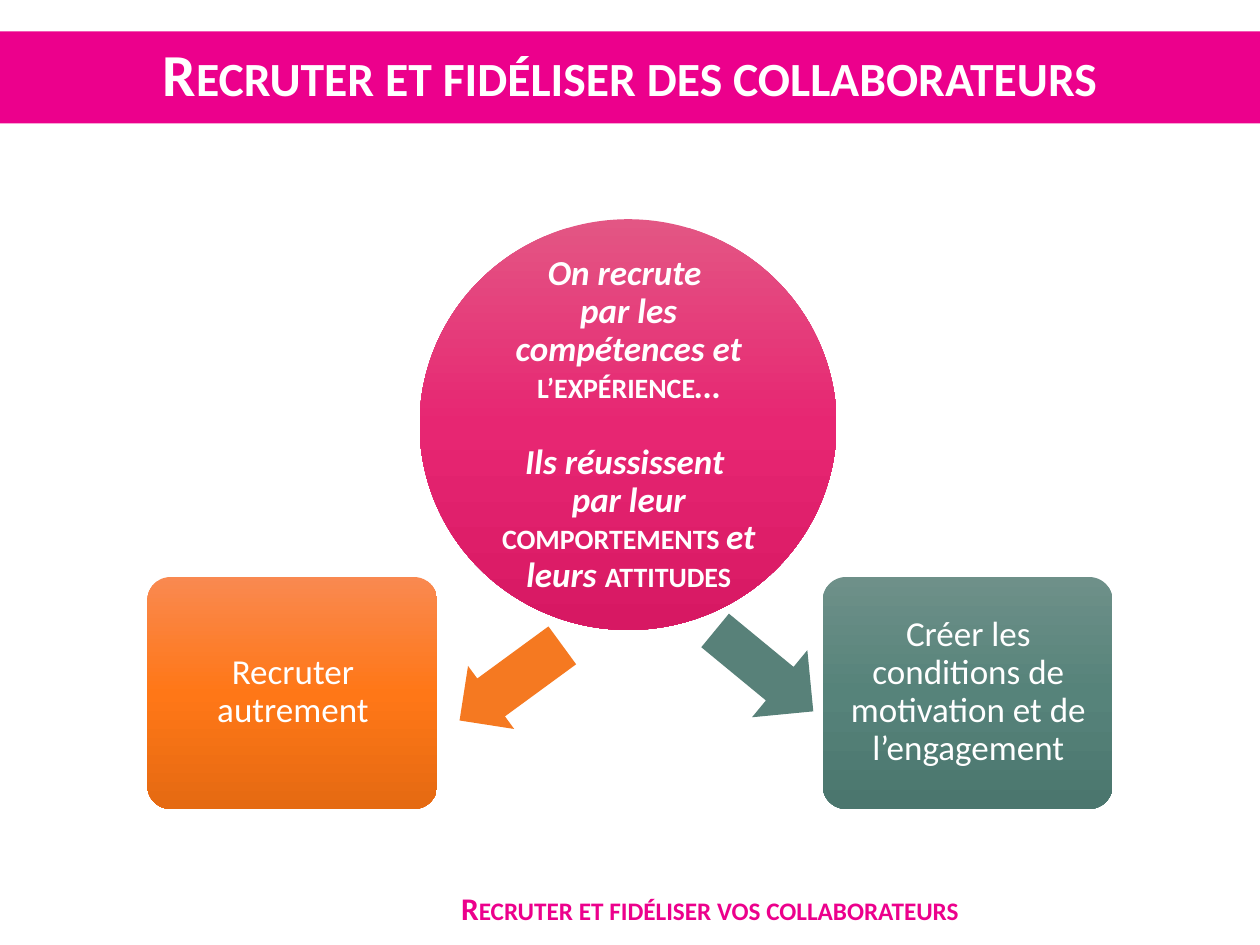
"""Build the slide on recruiting and retaining staff."""
from copy import deepcopy

from pptx import Presentation
from pptx.dml.color import RGBColor
from pptx.enum import shapes, text
from pptx.oxml import ns
from pptx.util import Inches, Pt

COLOURS = {"magenta": "EC008C", "white": "FFFFFF", "orange": "F57921", "green": "588179"}
GRADIENTS = {
    "pink": ("E35684", "E72672", "D71863"),
    "orange": ("F98950", "FF7717", "E56A12"),
    "green": ("6E9089", "56837A", "4B766E"),
}
KINDS = shapes.MSO_SHAPE
ITALIC = {"bold": True, "italic": True}
CAPS = {"bold": True, "italic": False, "caps": True}
PLAIN = {"bold": False}


def add_figure(kind, place, fill, adjustments=(), rotation=0):
    figure = page.shapes.add_shape(kind, *map(Inches, place))
    figure.shadow.inherit = False
    figure.line.fill.background()
    figure.rotation = rotation
    for index, value in enumerate(adjustments):
        figure.adjustments[index] = value
    if isinstance(fill, str):
        figure.fill.solid()
        figure.fill.fore_color.rgb = RGBColor.from_string(fill)
        return figure
    figure.fill.gradient()
    figure.fill.gradient_angle = 270
    stop_list = figure._element.spPr.find(ns.qn("a:gradFill")).find(ns.qn("a:gsLst"))
    stop_list.append(deepcopy(stop_list[0]))
    for index, stop in enumerate(figure.fill.gradient_stops):
        stop.position = index / 2
        stop.color.rgb = RGBColor.from_string(fill[index])
    return figure


def write(box, paragraphs, size, colour="white", margin=None, spacing=0.9, gap=0):
    frame = box.text_frame
    frame.word_wrap = True
    frame.vertical_anchor = text.MSO_ANCHOR.MIDDLE
    if margin is not None:
        for side in ("left", "right", "top", "bottom"):
            setattr(frame, f"margin_{side}", Inches(margin))
    for index, pieces in enumerate(paragraphs):
        para = frame.add_paragraph() if index else frame.paragraphs[0]
        para.alignment = text.PP_ALIGN.CENTER
        para.line_spacing = spacing
        if index:
            para.space_before = Pt(gap)
        for words, style in pieces:
            for number, line in enumerate(words.split("\n")):
                if number:
                    para.add_line_break()
                span = para.add_run()
                span.text = line
                look = {"name": "Calibri", "size": Pt(size), **style}
                if look.pop("caps", False):
                    span.font._element.set("cap", "small")
                for name, value in look.items():
                    setattr(span.font, name, value)
                span.font.color.rgb = RGBColor.from_string(COLOURS[colour])


deck = Presentation()
deck.slide_width, deck.slide_height = Inches(10), Inches(7.5)
page = deck.slides.add_slide(deck.slide_layouts[6])

footer = page.shapes.add_textbox(*map(Inches, (2.15, 7.01, 6.97, 0.4)))
write(footer, [[("Recruter et fidéliser vos collaborateurs", CAPS)]], 18, "magenta", spacing=1)

banner = add_figure(KINDS.RECTANGLE, (0, 0.25, 10, 0.73), COLOURS["magenta"])
write(banner, [[("Recruter et fidéliser des collaborateurs", CAPS)]], 34)

add_figure(KINDS.OVAL, (3.33, 1.74, 3.31, 3.26), GRADIENTS["pink"])
message = page.shapes.add_textbox(*map(Inches, (3.82, 2.22, 2.34, 2.31)))
write(message, [
    [("On recrute \npar les compétences et ", ITALIC), ("l’expérience", CAPS), ("…", ITALIC)],
    [("Ils réussissent \npar leur ", ITALIC), ("comportements ", CAPS),
     ("et leurs ", ITALIC), ("attitudes", CAPS)],
], 20, margin=0.01, gap=21.5)

add_figure(KINDS.LEFT_ARROW, (3.55, 5.11, 1.01, 0.62), COLOURS["orange"], (0.6, 0.5), 323.8)
add_figure(KINDS.RIGHT_ARROW, (5.56, 4.98, 1.01, 0.69), COLOURS["green"], rotation=39.5)

for left, tone, words in (
    (1.17, "orange", "Recruter autrement"),
    (6.53, "green", "Créer les conditions de motivation et de l’engagement"),
):
    add_figure(KINDS.ROUNDED_RECTANGLE, (left, 4.58, 2.3, 1.84), GRADIENTS[tone], (0.1,))
    label = page.shapes.add_textbox(*map(Inches, (left + 0.06, 4.63, 2.19, 1.73)))
    write(label, [[(words, PLAIN)]], 20, margin=0.04)

deck.save("out.pptx")
